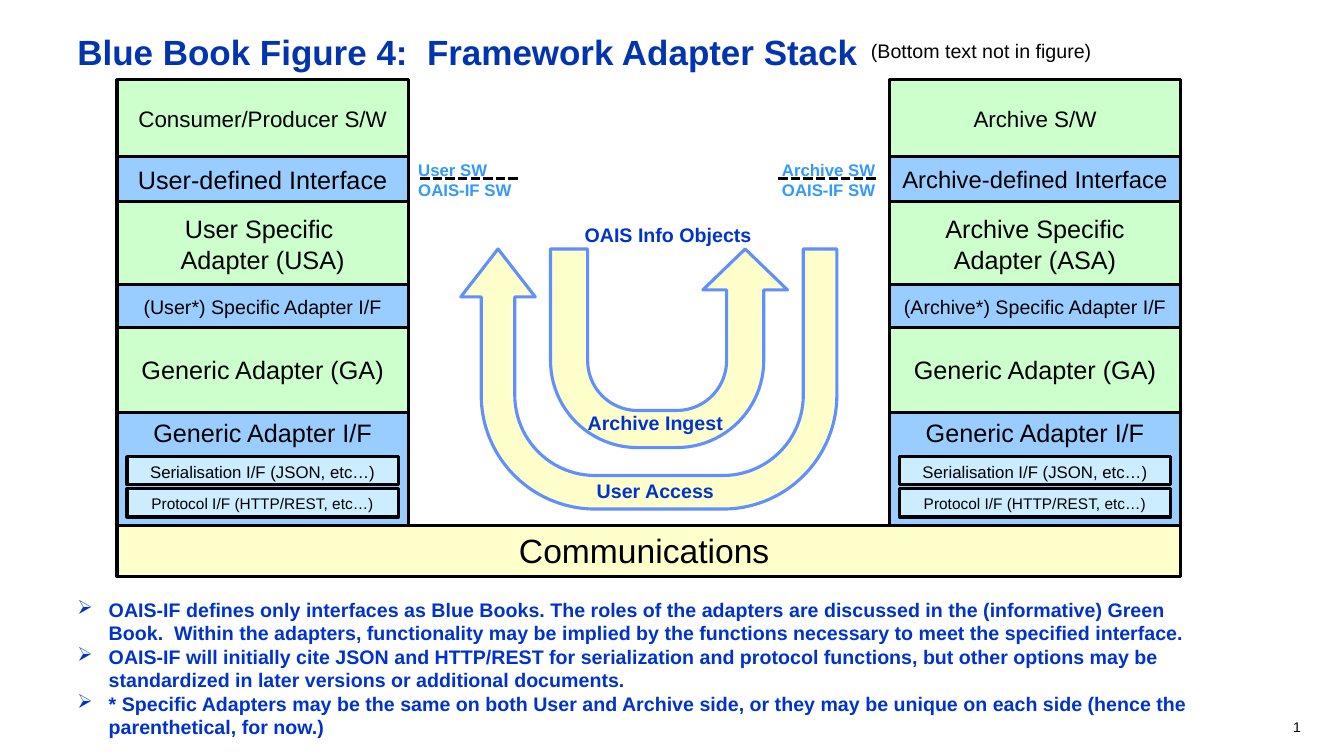
"""Build the framework adapter stack slide."""
from lxml import etree
from pptx import Presentation
from pptx.dml.color import RGBColor
from pptx.enum.dml import MSO_LINE
from pptx.enum.shapes import MSO_CONNECTOR, MSO_SHAPE
from pptx.enum.text import MSO_ANCHOR, MSO_AUTO_SIZE, PP_ALIGN
from pptx.oxml.ns import qn
from pptx.util import Inches, Pt

LEFT, CENTER, RIGHT = PP_ALIGN.LEFT, PP_ALIGN.CENTER, PP_ALIGN.RIGHT
TOP, MIDDLE = MSO_ANCHOR.TOP, MSO_ANCHOR.MIDDLE
RECT, UTURN = MSO_SHAPE.RECTANGLE, MSO_SHAPE.U_TURN_ARROW
STRAIGHT, DASH = MSO_CONNECTOR.STRAIGHT, MSO_LINE.SQUARE_DOT
GROW = MSO_AUTO_SIZE.SHAPE_TO_FIT_TEXT

BLACK = RGBColor(0, 0, 0)
NAVY = RGBColor(0x02, 0x34, 0xAD)
BLUE = RGBColor(0x00, 0x33, 0xCC)
SKY = RGBColor(0x33, 0x99, 0xFF)
EDGE = RGBColor(0x61, 0x8F, 0xFD)
GREEN = RGBColor(0xCC, 0xFF, 0xCC)
AZURE = RGBColor(0x99, 0xCC, 0xFF)
PALE = RGBColor(0xCC, 0xEC, 0xFF)
CREAM = RGBColor(0xFF, 0xFF, 0xCC)

WIDE, HIGH = 13.33, 7.5
COLS, COL = (1.16, 8.82), 2.89
BASE, PAD = 5.21, 0.1

# top, height, fill, anchor, then text and size for each column
ROWS = [
    (0.79, 0.77, GREEN, MIDDLE, ("Consumer/Producer S/W", 16), ("Archive S/W", 16)),
    (2, 0.84, GREEN, MIDDLE, ("User Specific \nAdapter (USA)", 18),
     ("Archive Specific Adapter (ASA)", 18)),
    (4.09, 1.12, AZURE, TOP, ("Generic Adapter I/F", 18), ("Generic Adapter I/F", 18)),
    (2.82, 0.45, AZURE, MIDDLE, ("(User*) Specific Adapter I/F", 14),
     ("(Archive*) Specific Adapter I/F", 14)),
    (1.55, 0.45, AZURE, MIDDLE, ("User-defined Interface", 18),
     ("Archive-defined Interface", 17)),
    (3.25, 0.84, GREEN, MIDDLE, ("Generic Adapter (GA)", 18), ("Generic Adapter (GA)", 18)),
]
INNER = [
    (4.53, "Serialisation I/F (JSON, etc…)", 12),
    (4.85, "Protocol I/F (HTTP/REST, etc…)", 11),
]
ARROWS = [
    ((4.57, 2.47, 3.73, 2.58), (0.129, 0.143, 0.184, 0.438, 1), False),
    ((5.46, 2.47, 2.35, 1.97), (0.187, 0.213, 0.206, 0.438, 1), True),
]
LABELS = [
    ("OAIS Info Objects", (5.7, 2.16, 1.87, 0.34)),
    ("Archive Ingest", (5.73, 4.03, 1.55, 0.34)),
    ("User Access", (5.82, 4.7, 1.37, 0.34)),
]
SPLITS = [
    ("User SW\nOAIS-IF SW", 4.05, 4.17, LEFT),
    ("Archive SW\nOAIS-IF SW", 7.64, 7.72, RIGHT),
]
NOTES = [
    "OAIS-IF defines only interfaces as Blue Books. The roles of the adapters are "
    "discussed in the (informative) Green Book.  Within the adapters, functionality "
    "may be implied by the functions necessary to meet the specified interface.",
    "OAIS-IF will initially cite JSON and HTTP/REST for serialization and protocol "
    "functions, but other options may be standardized in later versions or "
    "additional documents.",
    "* Specific Adapters may be the same on both User and Archive side, or they may "
    "be unique on each side (hence the parenthetical, for now.)",
]

deck = Presentation()
deck.slide_width, deck.slide_height = Inches(WIDE), Inches(HIGH)
slide = deck.slides.add_slide(deck.slide_layouts[6])


def place(box):
    return [Inches(v) for v in box]


def shape(kind, box, fill, line=BLACK):
    item = slide.shapes.add_shape(kind, *place(box))
    item.shadow.inherit = False
    item.fill.solid()
    item.fill.fore_color.rgb = fill
    item.line.color.rgb = line
    item.line.width = Pt(2.25)
    return item


def write(text, box, size=14, color=BLACK, bold=False, align=LEFT, anchor=TOP,
          wrap=True, fill=None, space=None, bullet=None):
    if fill is None:
        item = slide.shapes.add_textbox(*place(box))
    else:
        item = shape(RECT, box, fill)
    frame = item.text_frame
    frame.word_wrap, frame.vertical_anchor = wrap, anchor
    if not wrap:
        frame.auto_size = GROW
    frame.text = text
    for para in frame.paragraphs:
        para.alignment = align
        if space:
            para.line_spacing = space
        if bullet:
            props = para._p.get_or_add_pPr()
            props.set("marL", str(Inches(0.31)))
            props.set("indent", str(-Inches(0.31)))
            etree.SubElement(props, qn("a:buChar")).set("char", bullet)
        for run in para.runs:
            font = run.font
            font.name, font.size, font.bold = "Arial", Pt(size), bold
            font.color.rgb = color


def dash(left, width, y):
    line = slide.shapes.add_connector(STRAIGHT, *place((left, y, left + width, y)))
    line.line.color.rgb = BLACK
    line.line.width = Pt(2.25)
    line.line.dash_style = DASH
    etree.SubElement(line._element.spPr, qn("a:effectLst"))


write("Blue Book Figure 4:  Framework Adapter Stack", (0.67, 0.3, 12, 0.62),
      size=25, color=NAVY, bold=True, space=0.9)
write("1", (9.89, 7.08, 3.11, 0.25), size=10, align=RIGHT)
write("Communications ", (COLS[0], BASE, COLS[1] + COL - COLS[0], 0.51),
      size=24, align=CENTER, fill=CREAM)

for box, bends, flip in ARROWS:
    arrow = shape(UTURN, box, CREAM, EDGE)
    arrow.rotation = 180
    for i, bend in enumerate(bends):
        arrow.adjustments[i] = bend
    if flip:
        arrow._element.spPr.find(qn("a:xfrm")).set("flipH", "1")

for text, box in LABELS:
    write(text, box, color=BLUE, bold=True, wrap=False)

for side, left in enumerate(COLS):
    for top, height, fill, anchor, *cells in ROWS:
        text, size = cells[side]
        write(text, (left, top, COL, height), size=size, align=CENTER,
              anchor=anchor, fill=fill)
    for top, text, size in INNER:
        write(text, (left + PAD, top, COL - 2 * PAD, 0.28), size=size,
              align=CENTER, fill=PALE)

for text, left, start, align in SPLITS:
    dash(start, 0.98, 1.77)
    write(text, (left, 1.53, 1.14, 0.5), size=12, color=SKY, bold=True,
          align=align, anchor=MIDDLE, wrap=False)

write("\n".join(NOTES), (0.67, 5.88, 11.21, 1.51), color=BLUE, bold=True, bullet="➢")
write("(Bottom text not in figure)", (8.54, 0.34, 2.4, 0.34), wrap=False)

deck.save("out.pptx")
